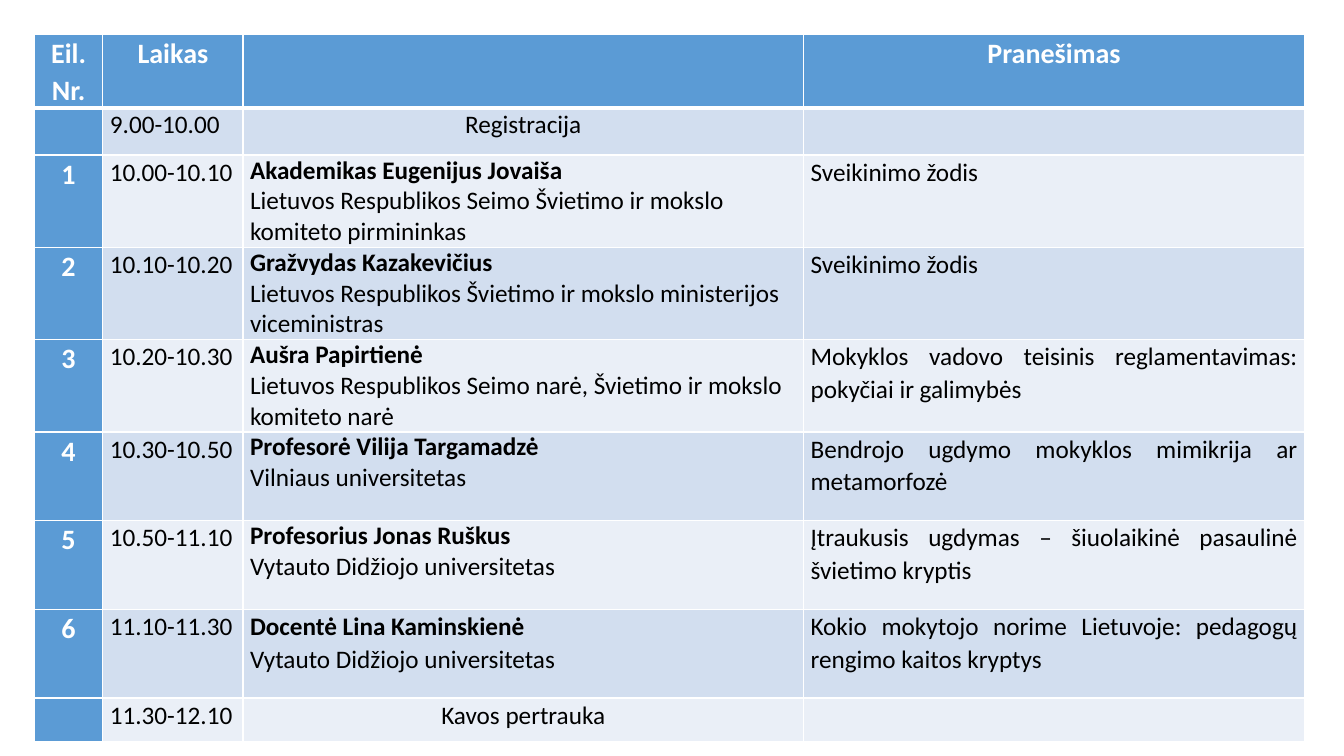
from pptx import Presentation
from pptx.dml.color import RGBColor as RGB
from pptx.enum.text import PP_ALIGN as AL
from pptx.oxml import parse_xml
from pptx.oxml.ns import nsdecls
from pptx.util import Emu, Pt

PX = 9144
COLORS = {"head": "5B9BD5", "dark": "D2DEEF", "light": "EAEFF7",
          "white": "FFFFFF", "black": "000000"}
COLS = [68, 139, 556, 497]
HEIGHTS = [70, 47, 90, 90, 90, 88, 88, 88, 43]
MARGINS = {"margin_left": Emu(7 * PX), "margin_right": Emu(7 * PX),
           "margin_top": 0, "margin_bottom": 0}
HEAD = {"size": Pt(20), "bold": True}
BODY = {"size": Pt(18), "bold": False}
NAME = {"size": Pt(18), "bold": True}

PROGRAMME = [
    ("Eil. Nr.", "Laikas", [], "Pranešimas"),
    ("", "9.00-10.00", ["Registracija"], ""),
    ("1", "10.00-10.10",
     ["Akademikas Eugenijus Jovaiša",
      "Lietuvos Respublikos Seimo Švietimo ir mokslo komiteto pirmininkas"],
     "Sveikinimo žodis"),
    ("2", "10.10-10.20",
     ["Gražvydas Kazakevičius",
      "Lietuvos Respublikos Švietimo ir mokslo ministerijos viceministras"],
     "Sveikinimo žodis"),
    ("3", "10.20-10.30",
     ["Aušra Papirtienė",
      "Lietuvos Respublikos Seimo narė, Švietimo ir mokslo komiteto narė"],
     "Mokyklos vadovo teisinis reglamentavimas: pokyčiai ir galimybės"),
    ("4", "10.30-10.50",
     ["Profesorė Vilija Targamadzė", "Vilniaus universitetas"],
     "Bendrojo ugdymo mokyklos mimikrija ar metamorfozė"),
    ("5", "10.50-11.10",
     ["Profesorius Jonas Ruškus", "Vytauto Didžiojo universitetas"],
     "Įtraukusis ugdymas – šiuolaikinė pasaulinė švietimo kryptis"),
    ("6", "11.10-11.30",
     ["Docentė Lina Kaminskienė", "Vytauto Didžiojo universitetas"],
     "Kokio mokytojo norime Lietuvoje: pedagogų rengimo kaitos kryptys"),
    ("", "11.30-12.10", ["Kavos pertrauka"], ""),
]
LOOSE_SPEAKER_ROW = 7


class Deck:
    """Hold the style and current slide, and draw the programme table."""

    def __init__(self, prs, font):
        self.font = font
        self.s = prs.slides.add_slide(prs.slide_layouts[6])

    def table(self, x, y, cols, heights):
        frame = self.s.shapes.add_table(
            len(heights), len(cols), *(Emu(v * PX) for v in (x, y, sum(cols), sum(heights))))
        table = frame.table
        for col, width in zip(table.columns, cols):
            col.width = Emu(width * PX)
        for row, height in zip(table.rows, heights):
            row.height = Emu(height * PX)
        return table

    def cell(self, cell, fill, top=1, bottom=1):
        for key, value in MARGINS.items():
            setattr(cell, key, value)
        cell.fill.solid()
        cell.fill.fore_color.rgb = RGB.from_string(COLORS[fill])
        widths = {"lnL": 1, "lnR": 1, "lnT": top, "lnB": bottom}
        for i, (tag, width) in enumerate(widths.items()):
            cell._tc.get_or_add_tcPr().insert(i, parse_xml(
                f'<a:{tag} {nsdecls("a")} w="{Pt(width)}"><a:solidFill>'
                f'<a:srgbClr val="{COLORS["white"]}"/></a:solidFill></a:{tag}>'))

    def text(self, cell, lines, styles, color, align, spacing=1.07):
        tf = cell.text_frame
        for i, (line, style) in enumerate(zip(lines, styles)):
            p = tf.add_paragraph() if i else tf.paragraphs[0]
            p.alignment, p.line_spacing = align, spacing
            r = p.add_run()
            r.text = line
            for key, value in {"name": self.font, **style}.items():
                setattr(r.font, key, value)
            r.font.color.rgb = RGB.from_string(COLORS[color])


def main():
    prs = Presentation()
    prs.slide_width, prs.slide_height = Emu(1333 * PX), Emu(750 * PX)
    deck = Deck(prs, "Calibri")
    table = deck.table(34, 34, COLS, HEIGHTS)
    for i, (number, time, speaker, talk) in enumerate(PROGRAMME):
        band = "dark" if i % 2 else "light"
        for j, content in enumerate(([number], [time], speaker, [talk])):
            cell = table.cell(i, j)
            heading = i == 0 or j == 0
            deck.cell(cell, "head" if heading else band,
                      3 if i == 1 else 1, 3 if i == 0 else 1)
            lines = [line for line in content if line]
            if heading:
                deck.text(cell, lines, [HEAD], "white", AL.CENTER)
            elif j == 2 and len(lines) == 2:
                loose = i == LOOSE_SPEAKER_ROW
                deck.text(cell, lines, [NAME, BODY], "black",
                          AL.JUSTIFY if loose else AL.LEFT, 1.07 if loose else 1.0)
            else:
                align = {1: AL.LEFT, 2: AL.CENTER, 3: AL.JUSTIFY}[j]
                deck.text(cell, lines, [BODY], "black", align)
    prs.save("out.pptx")


if __name__ == "__main__":
    main()
